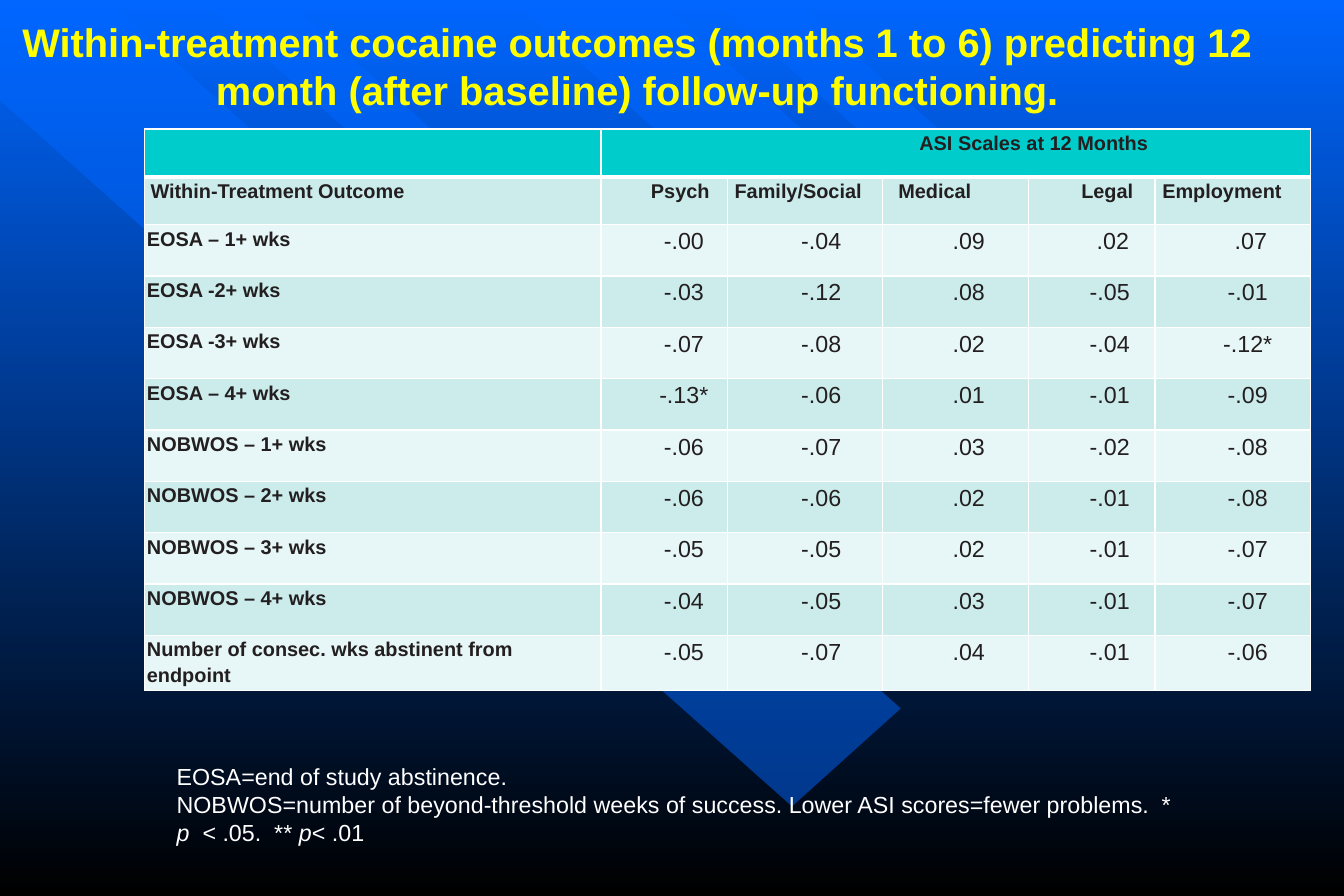
from pptx import Presentation
from pptx.dml.color import RGBColor as RGB
from pptx.enum.text import PP_ALIGN as Align
from pptx.oxml import parse_xml
from pptx.oxml.ns import nsdecls
from pptx.util import Inches, Pt

COLORS = {
    "blue": "0066FF", "black": "000000", "white": "FFFFFF", "title": "FFFF00",
    "head": "00CCCC", "dark": "CCECEC", "light": "E7F6F6", "ink": "231F20",
}


def style(para, size, color, bold=False):
    for run in para.runs:
        run.font.name = "Arial"
        run.font.size = Pt(size)
        run.font.bold = bold
        run.font.color.rgb = RGB.from_string(COLORS[color])


def dress(cell, fill, top=1, low=1):
    """Give a cell white borders, no margins and a fill."""
    props = cell._tc.get_or_add_tcPr()
    for side, width in zip("LRTB", (1, 1, top, low)):
        props.append(parse_xml(
            f'<a:ln{side} {nsdecls("a")} w="{Pt(width)}"><a:solidFill>'
            f'<a:srgbClr val="{COLORS["white"]}"/></a:solidFill></a:ln{side}>'))
    cell.fill.solid()
    cell.fill.fore_color.rgb = RGB.from_string(COLORS[fill])
    cell.margin_left = cell.margin_right = 0
    cell.margin_top = cell.margin_bottom = 0


prs = Presentation()
prs.slide_width, prs.slide_height = Inches(11.25), Inches(7.5)
slide = prs.slides.add_slide(prs.slide_layouts[6])
shapes = slide.shapes

# Background gradient, blue at the top
back = slide.background.fill
back.gradient()
back.gradient_angle = 270
for stop, pos, color in zip(back.gradient_stops, (0, 1), ("blue", "black")):
    stop.position = pos
    stop.color.rgb = RGB.from_string(COLORS[color])

# Slanted translucent bands
bands = [
    [(7.54, 5.93), (0.89, 0), (0, 0), (0, 0.84), (6.63, 6.75)],
    [(2.4, 0), (8.31, 5.27), (7.95, 5.59), (1.68, 0)],
    [(5.5, 0), (9.85, 3.89), (9.24, 4.44), (4.27, 0)],
    [(5.97, 0), (10.09, 3.68), (10.43, 3.38), (6.65, 0)],
]
for band in bands:
    start, *rest = [(Inches(x), Inches(y)) for x, y in band]
    pen = shapes.build_freeform(*start)
    pen.add_line_segments(rest, close=True)
    shape = pen.convert_to_shape()
    shape.shadow.inherit = False
    shape.line.fill.background()
    shape.fill.solid()
    shape.fill.fore_color.rgb = RGB.from_string(COLORS["blue"])
    tint = shape._element.spPr.find(".//{*}solidFill/{*}srgbClr")
    tint.append(parse_xml(f'<a:alpha {nsdecls("a")} val="50000"/>'))

# Footnote
note = shapes.add_textbox(Inches(1.38), Inches(6.33), Inches(8.58), Inches(0.81))
frame = note.text_frame
frame.word_wrap = True
frame.text = "EOSA=end of study abstinence."
para = frame.add_paragraph()
parts = [
    ("NOBWOS=number of beyond-threshold weeks of success. "
     "Lower ASI scores=fewer problems.  * ", False),
    ("p  ", True), ("< .05.  ** ", False), ("p", True), ("< .01", False),
]
for text, slant in parts:
    run = para.add_run()
    run.text = text
    run.font.italic = slant
for para in frame.paragraphs:
    style(para, 14, "white")

# Table: two heading rows, then one row per outcome
heads = ["Within-Treatment Outcome", "Psych", "Family/Social", "Medical",
         "Legal", "Employment"]
data = [
    ["EOSA – 1+ wks", "-.00", "-.04", ".09", " .02", " .07"],
    ["EOSA -2+ wks", "-.03", "-.12", ".08", "-.05", "-.01"],
    ["EOSA -3+ wks", "-.07", "-.08", ".02", "-.04", "-.12*"],
    ["EOSA – 4+ wks", "-.13*", "-.06", ".01", "-.01", "-.09"],
    ["NOBWOS – 1+ wks", "-.06", "-.07", ".03", "-.02", "-.08"],
    ["NOBWOS – 2+ wks", "-.06", "-.06", ".02", "-.01", "-.08"],
    ["NOBWOS – 3+ wks", "-.05", "-.05", ".02", "-.01", "-.07"],
    ["NOBWOS – 4+ wks", "-.04", "-.05", ".03", "-.01", "-.07"],
    ["Number of consec. wks abstinent from endpoint",
     "-.05", "-.07", ".04", "-.01", "-.06"],
]
rows = [["", "ASI Scales at 12 Months", "", "", "", ""], heads] + data
widths = [3.82, 1.06, 1.3, 1.22, 1.06, 1.3]
top_dents = [0, 1.31, 0, 0, 0, 0]
head_dents = [0.05, 0.27, 0.06, 0.13, 0.26, 0.06]
data_dents = [0.02, 0.33, 0.27, 0.22, 0.3, 0.25]

table = shapes.add_table(len(rows), len(widths), Inches(1.21), Inches(1.08),
                         Inches(9.75), Inches(4.67)).table
table.first_row = table.horz_banding = False
for col, width in zip(table.columns, widths):
    col.width = Inches(width)
table.cell(0, 1).merge(table.cell(0, 5))

for r, row in enumerate(rows):
    table.rows[r].height = Inches(0.4 if r < 2 else 0.43)
    dents = (top_dents, head_dents, data_dents)[min(r, 2)]
    fill = "head" if r == 0 else "dark" if r % 2 else "light"
    for c, text in enumerate(row):
        cell = table.cell(r, c)
        dress(cell, fill, top=3 if r == 1 else 1, low=3 if r == 0 else 1)
        if not text:
            continue
        cell.text_frame.text = text
        para = cell.text_frame.paragraphs[0]
        value = r > 1 and c > 0
        mid = value or r == 0 or text in ("Psych", "Legal")
        para.alignment = Align.CENTER if mid else Align.LEFT
        para.line_spacing = 1.15
        para.space_before = Pt(1.4 if r > 1 else 1.3)
        para._p.get_or_add_pPr().set("marL", str(Inches(dents[c])))
        style(para, 14 if value else 12, "ink", bold=not value)

# Title
title = shapes.add_textbox(0, Inches(0.1), Inches(10.67), Inches(0.91))
frame = title.text_frame
frame.word_wrap = True
frame.text = ("Within-treatment cocaine outcomes (months 1 to 6) predicting 12 "
              "month (after baseline) follow-up functioning.")
frame.paragraphs[0].alignment = Align.CENTER
style(frame.paragraphs[0], 24, "title", bold=True)

prs.save("out.pptx")
